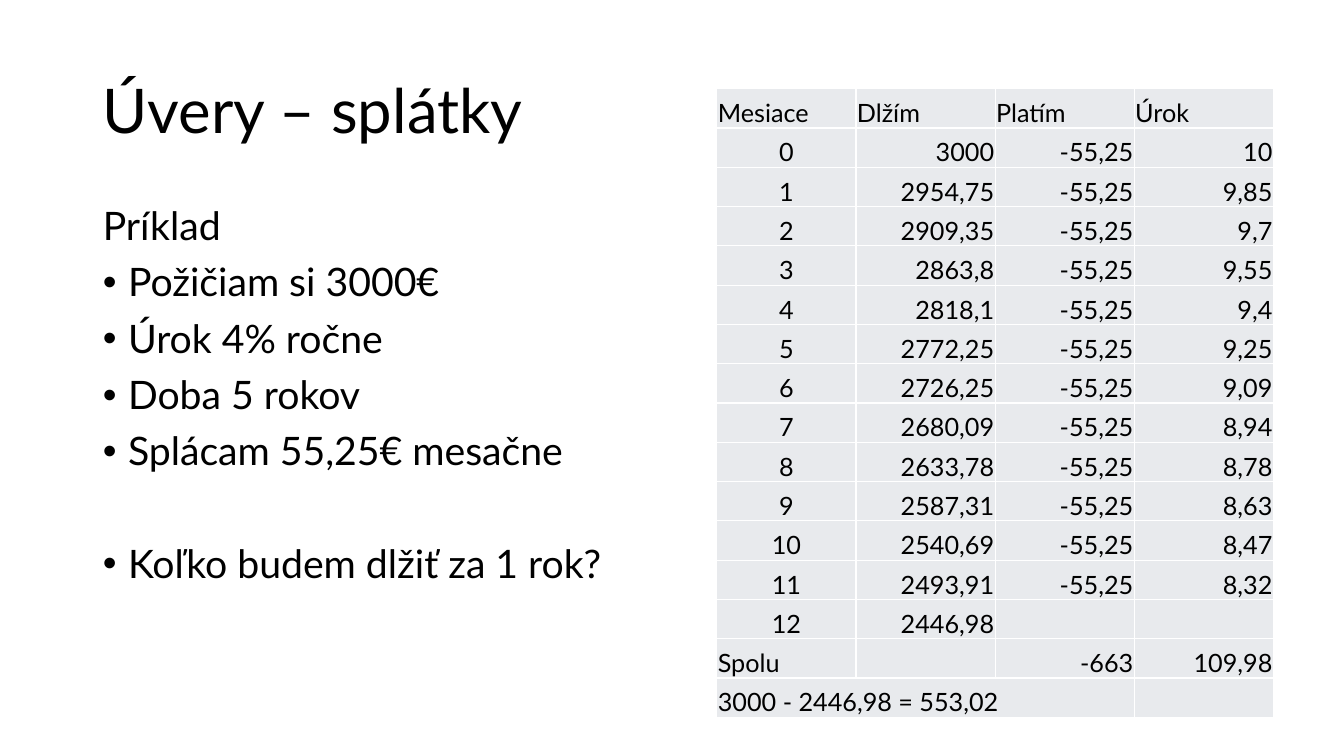
"""Build a slide with a loan example and its repayment table."""
from dataclasses import dataclass

from lxml.etree import SubElement
from pptx import Presentation
from pptx.dml.color import RGBColor
from pptx.enum.text import MSO_ANCHOR, MSO_AUTO_SIZE, PP_ALIGN
from pptx.oxml.ns import qn
from pptx.util import Inches, Pt

FONT = "Lato"
BLACK, WHITE, PALE_GREY = "000000", "FFFFFF", "E8EAED"
PAYMENT = "-55,25"
COLUMN_WIDTH, ROW_HEIGHT = 1.38, 0.39


@dataclass(frozen=True)
class Line:
    text: str
    bullet: bool = True
    space_before: float = 10


@dataclass(frozen=True)
class Row:
    values: tuple[str, str, str, str]
    alignments: tuple = (PP_ALIGN.CENTER,) + (PP_ALIGN.RIGHT,) * 3


HEADINGS = Row(("Mesiace", "Dlžím", "Platím", "Úrok"), (PP_ALIGN.LEFT,) * 4)
TOTAL = Row(("Spolu", "", "-663", "109,98"), (PP_ALIGN.LEFT,) + (PP_ALIGN.RIGHT,) * 3)
DIFFERENCE = Row(("3000 - 2446,98 = 553,02", "", "", ""), (PP_ALIGN.LEFT,) * 4)

DEBT_AND_INTEREST = (
    ("3000", "10"), ("2954,75", "9,85"), ("2909,35", "9,7"), ("2863,8", "9,55"),
    ("2818,1", "9,4"), ("2772,25", "9,25"), ("2726,25", "9,09"), ("2680,09", "8,94"),
    ("2633,78", "8,78"), ("2587,31", "8,63"), ("2540,69", "8,47"), ("2493,91", "8,32"),
    ("2446,98", ""),
)

EXAMPLE = (
    Line("Príklad", bullet=False),
    Line("Požičiam si 3000€"),
    Line("Úrok 4% ročne"),
    Line("Doba 5 rokov"),
    Line("Splácam 55,25€ mesačne"),
    Line("Koľko budem dlžiť za 1 rok?", space_before=50),
)


def colour(value: str) -> RGBColor:
    return RGBColor.from_string(value)


def style_text(paragraph, size: float) -> None:
    for run in paragraph.runs:
        run.font.name = FONT
        run.font.size = Pt(size)
        run.font.color.rgb = colour(BLACK)


def place(placeholder, left: float, top: float, width: float, height: float) -> None:
    placeholder.left, placeholder.top = Inches(left), Inches(top)
    placeholder.width, placeholder.height = Inches(width), Inches(height)
    placeholder.text_frame.auto_size = MSO_AUTO_SIZE.NONE
    placeholder.text_frame.word_wrap = True


def write_title(title, text: str) -> None:
    place(title, 0.92, 0.4, 11.5, 1.45)
    title.text_frame.text = text
    title.text_frame.vertical_anchor = MSO_ANCHOR.MIDDLE
    heading = title.text_frame.paragraphs[0]
    heading.alignment = PP_ALIGN.LEFT
    heading.line_spacing = 0.9
    style_text(heading, 44)


def set_bullet(paragraph, bullet: bool) -> None:
    properties = paragraph._p.get_or_add_pPr()
    indent = Inches(0.25) if bullet else 0
    properties.set("marL", str(indent))
    properties.set("indent", str(-indent))
    if bullet:
        SubElement(properties, qn("a:buFont"), typeface="Arial")
        SubElement(properties, qn("a:buChar"), char="•")
    else:
        SubElement(properties, qn("a:buNone"))


def write_example(body, lines: tuple[Line, ...]) -> None:
    place(body, 0.92, 2, 5.31, 4.76)
    body.text_frame.text = "\n".join(line.text for line in lines)
    for paragraph, line in zip(body.text_frame.paragraphs, lines):
        paragraph.line_spacing = 0.9
        paragraph.space_before = Pt(line.space_before)
        set_bullet(paragraph, line.bullet)
        style_text(paragraph, 28)


def add_borders(cell) -> None:
    properties = cell._tc.get_or_add_tcPr()
    for side in ("a:lnL", "a:lnR", "a:lnT", "a:lnB"):
        border = SubElement(properties, qn(side), w=str(Pt(1)))
        fill = SubElement(border, qn("a:solidFill"))
        SubElement(fill, qn("a:srgbClr"), val=WHITE)


def fill_cell(cell, text: str, alignment: PP_ALIGN) -> None:
    add_borders(cell)
    cell.fill.solid()
    cell.fill.fore_color.rgb = colour(PALE_GREY)
    cell.vertical_anchor = MSO_ANCHOR.BOTTOM
    cell.margin_left = cell.margin_right = cell.margin_top = Inches(0.01)
    cell.margin_bottom = 0
    cell.text_frame.text = text
    paragraph = cell.text_frame.paragraphs[0]
    paragraph.alignment = alignment
    style_text(paragraph, 18)


def repayment_rows() -> list[Row]:
    months = [
        Row((str(month), debt, PAYMENT if interest else "", interest))
        for month, (debt, interest) in enumerate(DEBT_AND_INTEREST)
    ]
    return [HEADINGS, *months, TOTAL, DIFFERENCE]


def add_repayments(slide, rows: list[Row]) -> None:
    columns = len(HEADINGS.values)
    repayments = slide.shapes.add_table(
        len(rows), columns, Inches(7.11), Inches(0.88),
        Inches(COLUMN_WIDTH * columns), Inches(ROW_HEIGHT * len(rows)),
    ).table
    repayments.first_row = repayments.horz_banding = False
    for column in repayments.columns:
        column.width = Inches(COLUMN_WIDTH)
    for row_index, row in enumerate(rows):
        repayments.rows[row_index].height = Inches(ROW_HEIGHT)
        for column_index, (text, alignment) in enumerate(zip(row.values, row.alignments)):
            fill_cell(repayments.cell(row_index, column_index), text, alignment)
    last = len(rows) - 1
    repayments.cell(last, 0).merge(repayments.cell(last, 2))


def main() -> None:
    presentation = Presentation()
    presentation.slide_width, presentation.slide_height = Inches(13.33), Inches(7.5)
    slide = presentation.slides.add_slide(presentation.slide_layouts[1])
    write_title(slide.shapes.title, "Úvery – splátky")
    write_example(slide.placeholders[1], EXAMPLE)
    add_repayments(slide, repayment_rows())
    presentation.save("out.pptx")


if __name__ == "__main__":
    main()
